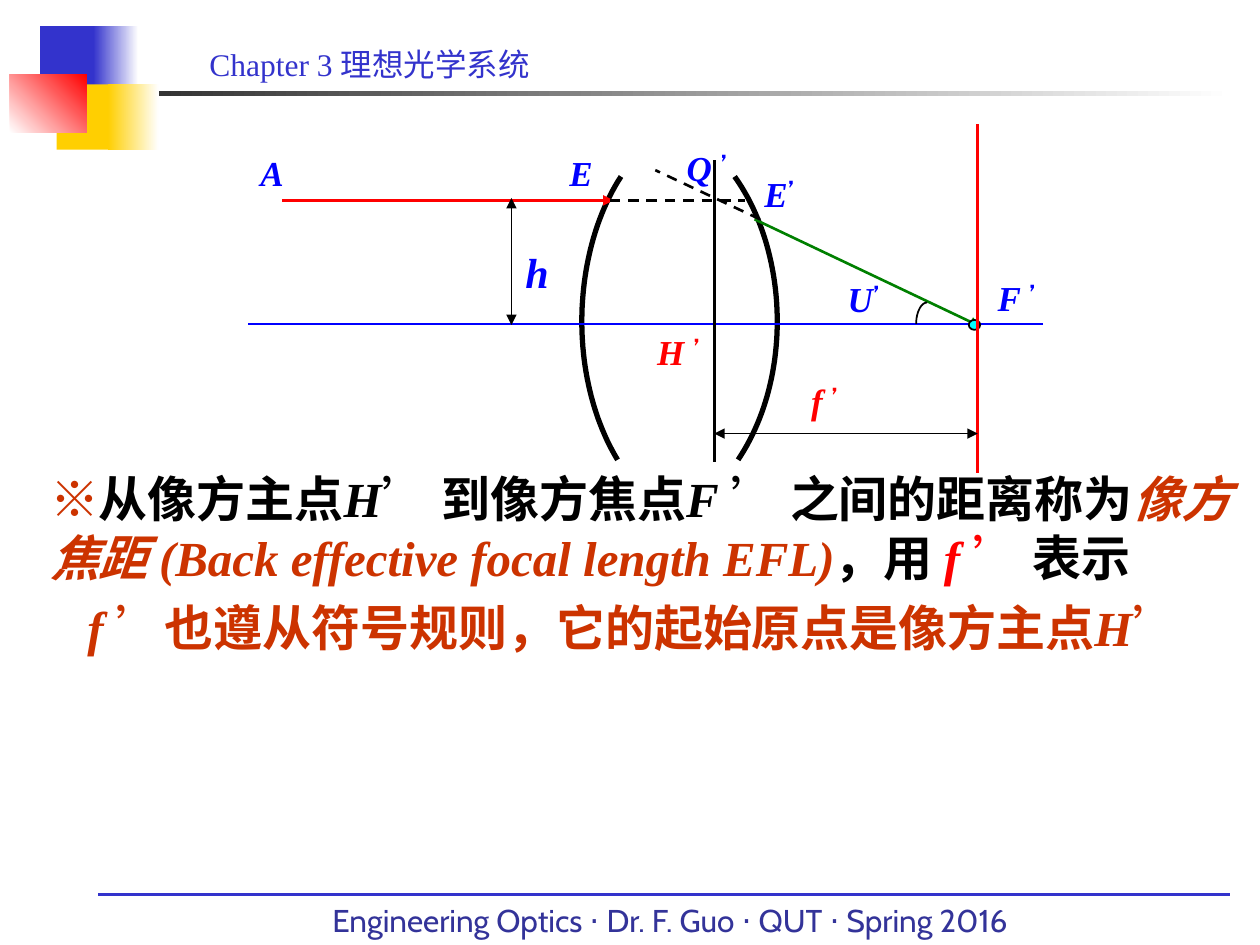
from pptx import Presentation
from pptx import util as u
from pptx.dml.color import RGBColor
from pptx.enum import dml, shapes, text
from pptx.oxml.ns import qn
from lxml import etree

BLACK = RGBColor(0, 0, 0)
WHITE = RGBColor(255, 255, 255)
CHARCOAL = RGBColor(0x1C, 0x1C, 0x1C)
INDIGO = RGBColor(0x33, 0x33, 0xCC)
NAVY = RGBColor(0x33, 0x33, 0x99)
YELLOW = RGBColor(0xFF, 0xCF, 0x01)
RED = RGBColor(255, 0, 0)
RUST = RGBColor(0xCC, 0x33, 0)
BLUE = RGBColor(0, 0, 255)
GREEN = RGBColor(0, 0x80, 0)
CYAN = RGBColor(0, 255, 255)
SERIF, SANS = "Times New Roman", "Cabin"

AXIS_Y, RAY_Y = 6.53, 4.04
PRINCIPAL_X, FOCAL_X = 14.4, 19.71


def add_block(slide, box, fill, fade_to=None, angle=0, kind=shapes.MSO_SHAPE.RECTANGLE):
    block = slide.shapes.add_shape(kind, *map(u.Cm, box))
    block.shadow.inherit = False
    block.line.fill.background()
    if fade_to is None:
        block.fill.solid()
        block.fill.fore_color.rgb = fill
    else:
        block.fill.gradient()
        block.fill.gradient_angle = angle
        for stop, color, position in zip(block.fill.gradient_stops, (fill, fade_to), (0, 1)):
            stop.color.rgb = color
            stop.position = position
    return block


def add_line(slide, start, end, color, width=1.5, dashed=False, arrows=()):
    """Arrows holds the ends to point: headEnd is the start, tailEnd the end."""
    line = slide.shapes.add_connector(
        shapes.MSO_CONNECTOR.STRAIGHT, *map(u.Cm, (*start, *end)))
    line.line.color.rgb = color
    line.line.width = u.Pt(width)
    if dashed:
        line.line.dash_style = dml.MSO_LINE.DASH
    for arrow in arrows:
        etree.SubElement(line.line._get_or_add_ln(), qn("a:" + arrow), type="triangle")
    etree.SubElement(line._element.spPr, qn("a:effectLst"))


def bezier(p0, p1, p2, p3, steps=24):
    for i in range(steps + 1):
        t = i / steps
        yield tuple((1 - t) ** 3 * a + 3 * t * (1 - t) ** 2 * b
                    + 3 * t * t * (1 - t) * c + t ** 3 * d
                    for a, b, c, d in zip(p0, p1, p2, p3))


def add_curve(slide, segments, width):
    points = [(u.Cm(x), u.Cm(y)) for segment in segments for x, y in bezier(*segment)]
    builder = slide.shapes.build_freeform(*points[0])
    builder.add_line_segments(points[1:], close=False)
    curve = builder.convert_to_shape()
    curve.shadow.inherit = False
    curve.fill.background()
    curve.line.color.rgb = BLACK
    curve.line.width = u.Pt(width)


def add_text(slide, box, runs, size, color=BLACK, font=SERIF, bold=False, italic=False,
             align=text.PP_ALIGN.LEFT, anchor=text.MSO_ANCHOR.TOP, margins=(0.25, 0.13)):
    """Each run is (wording, overrides of the shared format)."""
    frame = slide.shapes.add_textbox(*map(u.Cm, box)).text_frame
    frame.word_wrap = True
    frame.vertical_anchor = anchor
    frame.margin_left = frame.margin_right = u.Cm(margins[0])
    frame.margin_top = frame.margin_bottom = u.Cm(margins[1])
    paragraph = frame.paragraphs[0]
    paragraph.alignment = align
    shared = dict(size=size, color=color, font=font, bold=bold, italic=italic)
    for wording, overrides in runs:
        look = {**shared, **overrides}
        run = paragraph.add_run()
        run.text = wording
        run.font.size = u.Pt(look["size"])
        run.font.name = look["font"]
        run.font.bold = look["bold"]
        run.font.italic = look["italic"]
        run.font.color.rgb = look["color"]


def prime(wording="’", **look):
    return wording, dict(font=SANS, bold=False, italic=False, **look)


def add_label(slide, left, top, letter, color=BLUE, primed=True, size=20, width=1.85):
    runs = [(letter, {})] + ([prime()] if primed else [])
    add_text(slide, (left, top, width, 1.09), runs, size, color, bold=True, italic=True)


def add_template(slide):
    add_block(slide, (0.69, 1.83, 24.15, 0.1), CHARCOAL, WHITE)
    add_block(slide, (0.81, 0.53, 1.22, 1.32), INDIGO)
    add_block(slide, (1.88, 0.53, 0.91, 1.32), INDIGO, WHITE)
    add_block(slide, (1.14, 1.7, 1.17, 1.32), YELLOW)
    add_block(slide, (2.18, 1.7, 1.02, 1.32), YELLOW, WHITE)
    add_block(slide, (0.2, 1.5, 1.55, 1.17), WHITE, RED, angle=45)
    # White patch hides the start of the rule left of the squares.
    add_line(slide, (1.98, 18.03), (24.79, 18.03), INDIGO)
    add_text(slide, (1.27, 0.53, 11.23, 1.27), [("　　Chapter 3 理想光学系统 ", {})], 18,
             INDIGO, align=text.PP_ALIGN.CENTER, anchor=text.MSO_ANCHOR.BOTTOM)
    add_text(slide, (6.45, 18.03, 19.05, 1.02),
             [("Engineering Optics ⋅ Dr. F. Guo ⋅ QUT ⋅ Spring 2016", {})], 18, NAVY, SANS)


def add_explanation(slide):
    slanted = dict(italic=True)
    add_text(slide, (0.76, 9.32, 24.64, 2.62), [
        ("※", dict(color=RUST)), ("从像方主点", {}), ("H", slanted), prime("’ "),
        ("到像方焦点", {}), ("F ", slanted), prime("’ "), ("之间的距离称为", {}),
        ("像方焦距 (Back effective focal length EFL)", dict(color=RUST, italic=True)),
        ("，用 ", {}), ("f ", dict(color=RED, italic=True)), prime("’ ", color=RED),
        ("表示", {})], 28, bold=True)
    add_text(slide, (1.3, 11.91, 23.39, 1.45), [
        (" ", dict(size=24, bold=False)), ("f ", slanted), prime(),
        ("也遵从符号规则，它的起始原点是像方主点", {}), ("H", slanted), prime()],
        28, RUST, bold=True)


def add_lens(slide):
    top, bottom, middle = 3.56, 9.27, 6.48
    for rim_top, rim_bottom, upper, lower, bulge in (
            (12.52, 12.45, 12.01, 11.99, 11.73), (14.81, 14.88, 15.37, 15.39, 15.67)):
        add_curve(slide, [
            ((rim_top, top), (upper, 4.34), (bulge, 5.41), (bulge, middle)),
            ((bulge, middle), (bulge, 7.52), (lower, 8.51), (rim_bottom, bottom))], 3)


def add_rays(slide):
    both = ("headEnd", "tailEnd")
    add_line(slide, (5.69, RAY_Y), (12.37, RAY_Y), RED, arrows=["tailEnd"])
    add_line(slide, (15.21, 4.42), (19.76, 6.58), GREEN, arrows=["tailEnd"])
    add_line(slide, (21.03, AXIS_Y), (5, AXIS_Y), BLUE)
    add_curve(slide, [((18.69, 6.1), (18.57, 6.1), (18.47, 6.3), (18.47, AXIS_Y))], 1)
    focus = add_block(slide, (19.53, 6.45, 0.23, 0.2), CYAN, kind=shapes.MSO_SHAPE.OVAL)
    focus.line.color.rgb = BLACK
    focus.line.width = u.Pt(1)
    add_line(slide, (10.31, 3.99), (10.31, 6.55), BLACK, 1, arrows=both)
    add_line(slide, (FOCAL_X, 2.51), (FOCAL_X, 9.53), RED)
    add_line(slide, (12.29, RAY_Y), (15.01, RAY_Y), BLACK, dashed=True)
    add_line(slide, (15.32, 4.42), (13.21, 3.43), BLACK, dashed=True)
    add_line(slide, (PRINCIPAL_X, 3.23), (PRINCIPAL_X, 9.32), BLACK)
    add_line(slide, (PRINCIPAL_X, 8.74), (FOCAL_X, 8.74), BLACK, 0.75, arrows=both)


def add_labels(slide):
    add_label(slide, 5, 2.92, "A", primed=False)
    add_label(slide, 11.23, 2.92, "E", primed=False)
    add_label(slide, 10.34, 4.83, "h", primed=False, size=24, width=1.17)
    add_label(slide, 16.84, 5.46, "U")
    add_label(slide, 19.86, 5.44, "F ")
    add_label(slide, 15.16, 3.35, "E")
    add_label(slide, 13.59, 2.82, "Q ")
    add_label(slide, 13, 6.53, "H ", RED)
    add_label(slide, 16.1, 7.52, "f ", RED)


def main():
    deck = Presentation()
    deck.slide_width, deck.slide_height = u.Cm(25.4), u.Cm(19.05)
    slide = deck.slides.add_slide(deck.slide_layouts[6])
    add_template(slide)
    add_explanation(slide)
    add_lens(slide)
    add_rays(slide)
    add_labels(slide)
    deck.save("out.pptx")


if __name__ == "__main__":
    main()
